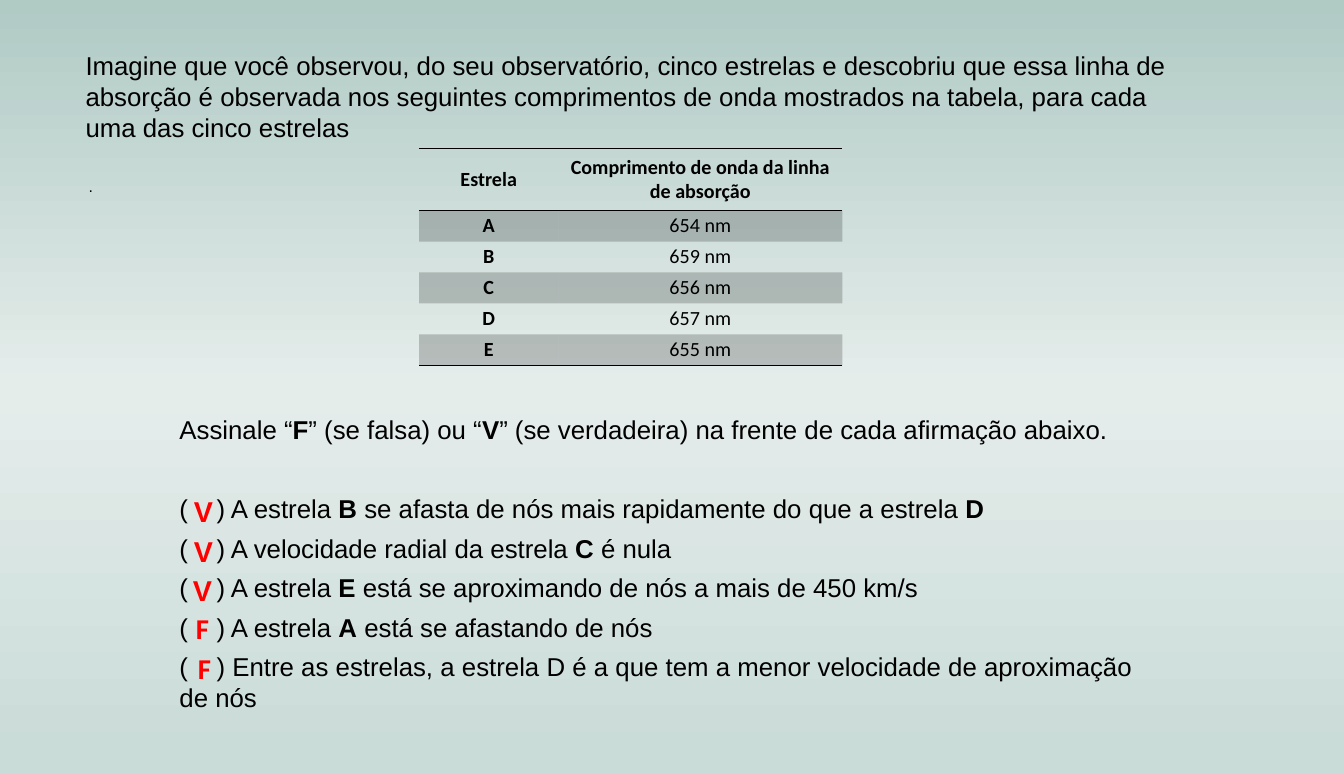
from copy import deepcopy
from typing import NamedTuple

from lxml import etree
from pptx import Presentation
from pptx.dml.color import RGBColor
from pptx.enum.text import MSO_ANCHOR, PP_ALIGN
from pptx.oxml import parse_xml
from pptx.oxml.ns import nsdecls, qn
from pptx.util import Inches, Pt

BLACK, RED = "000000", "FF0000"
NO_STYLE = "{2D5ABB26-0587-4C30-8999-92F81FD0307C}"


class Star(NamedTuple):
    name: str
    wavelength: str


class Answer(NamedTuple):
    mark: str
    left: float
    top: float
    width: float
    font: str


BACKGROUND = [(0, "B0CAC4"), (0.5, "E5EDEB"), (0.98, "CADCD8")]
STARS = [Star("A", "654 nm"), Star("B", "659 nm"), Star("C", "656 nm"),
         Star("D", "657 nm"), Star("E", "655 nm")]
INTRO = ("Imagine que você observou, do seu observatório, cinco estrelas e descobriu "
         "que essa linha de absorção é observada nos seguintes comprimentos de onda "
         "mostrados na tabela, para cada uma das cinco estrelas")
# Asterisks enclose bold words
INSTRUCTION = ("Assinale “*F*” (se falsa) ou “*V*” (se verdadeira) na frente de cada "
               "afirmação abaixo.")
STATEMENTS = [
    "A estrela *B* se afasta de nós mais rapidamente do que a estrela *D*",
    "A velocidade radial da estrela *C* é nula",
    "A estrela *E* está se aproximando de nós a mais de 450 km/s",
    "A estrela *A* está se afastando de nós",
    "Entre as estrelas, a estrela D é a que tem a menor velocidade de aproximação de nós",
]
ANSWERS = [
    Answer("V", 1.78, 4.74, 0.39, "Arial"),
    Answer("V", 1.78, 5.12, 0.39, "Arial"),
    Answer("V", 1.77, 5.5, 0.39, "Arial"),
    Answer("F", 1.8, 5.87, 0.33, "Calibri"),
    Answer("F", 1.82, 6.26, 0.33, "Calibri"),
]


def rgb(color: str) -> RGBColor:
    return RGBColor.from_string(color)


def write(paragraph, text: str, *, size=18, font="Arial", color=BLACK, bold=False,
          align=PP_ALIGN.LEFT, after=0, tab=None) -> None:
    paragraph.alignment = align
    paragraph.space_after = Pt(after)
    if tab is not None:
        tabs = etree.SubElement(paragraph._p.get_or_add_pPr(), qn("a:tabLst"))
        etree.SubElement(tabs, qn("a:tab"), pos=str(Inches(tab)), algn="l")
    paragraph.font.size = Pt(size)
    for index, part in enumerate(text.split("*")):
        if part:
            run = paragraph.add_run()
            run.text = part
            run.font.size = Pt(size)
            run.font.name = font
            run.font.bold = bold or index % 2 == 1
            run.font.color.rgb = rgb(color)


def add_text_frame(slide, left: float, top: float, width: float, height: float, wrap=True):
    box = slide.shapes.add_textbox(Inches(left), Inches(top), Inches(width), Inches(height))
    box.text_frame.word_wrap = wrap
    return box.text_frame


def paint_background(slide) -> None:
    fill = slide.background.fill
    fill.gradient()
    fill.gradient_angle = 270
    stop_list = slide._element.find(".//" + qn("a:gsLst"))
    stop_list.append(deepcopy(stop_list[-1]))
    for stop, (position, color) in zip(fill.gradient_stops, BACKGROUND):
        stop.position = position
        stop.color.rgb = rgb(color)


def format_cell(cell, text: str, bold: bool, shaded: bool, rules: str) -> None:
    cell.margin_left = cell.margin_right = Inches(0.07)
    cell.margin_top = cell.margin_bottom = 0
    cell.vertical_anchor = MSO_ANCHOR.MIDDLE
    write(cell.text_frame.paragraphs[0], text, size=14, font="Calibri", bold=bold,
          align=PP_ALIGN.CENTER)
    if shaded:
        cell.fill.solid()
        cell.fill.fore_color.rgb = rgb(BLACK)
    else:
        cell.fill.background()
    properties = cell._tc.get_or_add_tcPr()
    if shaded:
        shade = properties.find(".//" + qn("a:srgbClr"))
        etree.SubElement(shade, qn("a:alpha"), val="20000")
    for index, side in enumerate(rules):
        properties.insert(index, parse_xml(
            f'<a:ln{side} {nsdecls("a")} w="12700"><a:solidFill>'
            f'<a:srgbClr val="{BLACK}"/></a:solidFill></a:ln{side}>'))


def add_star_table(slide) -> None:
    rows = [Star("Estrela", "Comprimento de onda da linha de absorção"), *STARS]
    table = slide.shapes.add_table(len(rows), 2, Inches(4.06), Inches(1.44),
                                   Inches(4.1), Inches(2.1)).table
    table.first_row = table.horz_banding = False
    table._tbl.find(".//" + qn("a:tableStyleId")).text = NO_STYLE
    for column, width in zip(table.columns, (1.35, 2.75)):
        column.width = Inches(width)
    for r, star in enumerate(rows):
        table.rows[r].height = Inches(0.3 if r else 0.6)
        rules = "TB" if r == 0 else "B" if r == len(rows) - 1 else ""
        for c, text in enumerate(star):
            format_cell(table.cell(r, c), text, r == 0 or c == 0, r % 2 == 1, rules)


def main() -> None:
    prs = Presentation()
    prs.slide_width, prs.slide_height = Inches(13.02), Inches(7.5)
    slide = prs.slides.add_slide(prs.slide_layouts[6])
    paint_background(slide)

    # Observed wavelengths
    add_star_table(slide)
    dot = add_text_frame(slide, 0.76, 1.66, 0.24, 0.28, wrap=False)
    write(dot.paragraphs[0], ".", size=11)
    intro = add_text_frame(slide, 0.73, 0.43, 10.71, 1.01)
    write(intro.paragraphs[0], INTRO)

    # True or false statements
    quiz = add_text_frame(slide, 1.64, 3.96, 9.43, 3.03)
    write(quiz.paragraphs[0], INSTRUCTION, align=PP_ALIGN.JUSTIFY, after=33.6)
    for statement in STATEMENTS:
        write(quiz.add_paragraph(), f"(\t) {statement}", align=PP_ALIGN.JUSTIFY,
              after=6, tab=0.36)

    # Answers inside the brackets
    for answer in ANSWERS:
        frame = add_text_frame(slide, answer.left, answer.top, answer.width, 0.44, wrap=False)
        write(frame.paragraphs[0], answer.mark, size=20, font=answer.font, color=RED, bold=True)

    prs.save("out.pptx")


if __name__ == "__main__":
    main()
